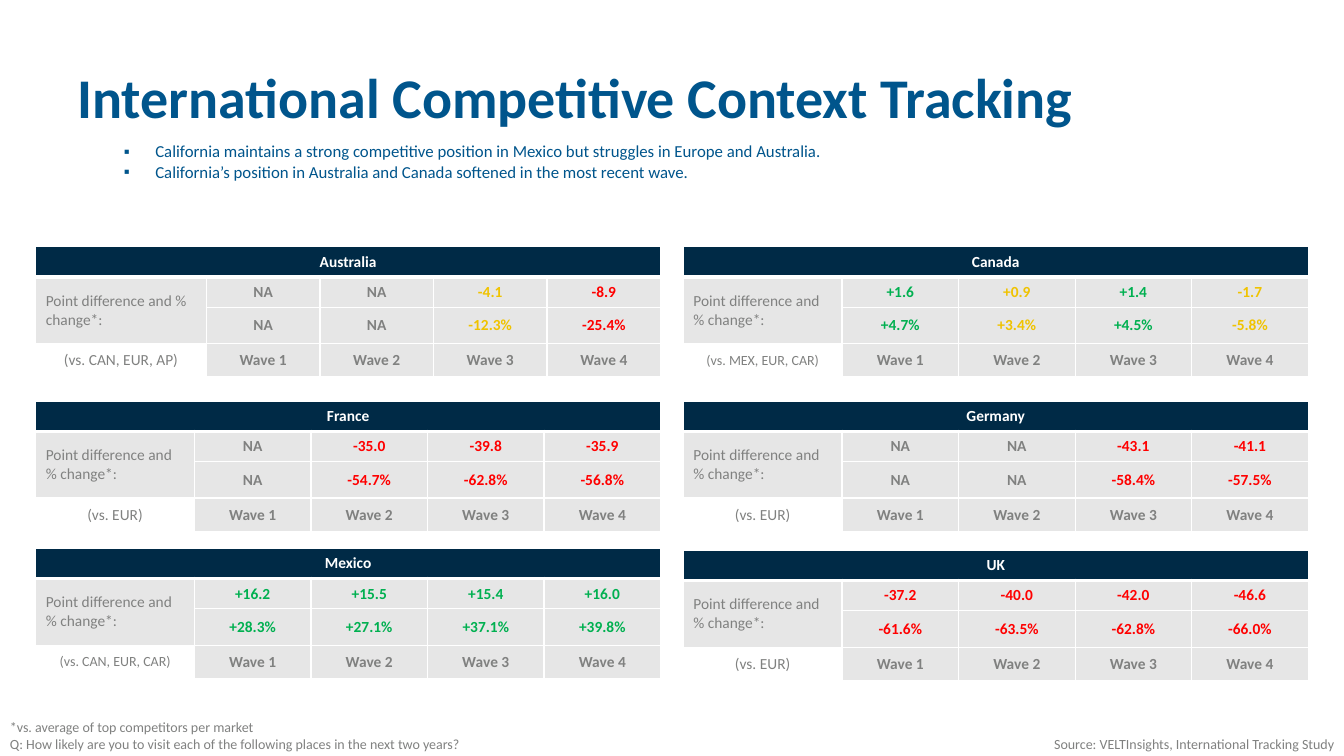
from lxml import etree
from pptx import Presentation
from pptx.dml.color import RGBColor
from pptx.enum.text import MSO_ANCHOR, MSO_AUTO_SIZE, PP_ALIGN
from pptx.oxml.ns import qn
from pptx.util import Cm, Pt

LEFT, CENTER, RIGHT = PP_ALIGN.LEFT, PP_ALIGN.CENTER, PP_ALIGN.RIGHT
TOP, MIDDLE = MSO_ANCHOR.TOP, MSO_ANCHOR.MIDDLE
NO_AUTOFIT = MSO_AUTO_SIZE.NONE

FONT = "Calibri"
COLORS = {
    "blue": "00558C",
    "navy": "002A46",
    "gray": "808180",
    "light": "E6E6E6",
    "white": "FFFFFF",
    "green": "00B050",
    "yellow": "F0C300",
    "red": "FF0000",
}
TITLE = "International Competitive Context Tracking"
FINDINGS = [
    "California maintains a strong competitive position in Mexico but struggles in Europe and Australia.",
    "California’s position in Australia and Canada softened in the most recent wave.",
]
FOOTNOTES = [
    "*vs. average of top competitors per market",
    "Q: How likely are you to visit each of the following places in the next two years?",
]
SOURCE = "Source: VELTInsights, International Tracking Study"

MEASURE = "Point difference and % change*:"
WAVES = ["Wave 1", "Wave 2", "Wave 3", "Wave 4"]
LEFT_TABLE, RIGHT_TABLE = 0.9, 17.22
TABLE_WIDTH = 15.75
LABEL_WIDTH, WIDE_LABEL_WIDTH = 4, 4.3
ROW_HEIGHTS = [0.76, 0.76, 0.92, 0.84]

# Market, left, top, label width, point differences, % changes, competitors, their text size
MARKETS = [
    ("Australia", LEFT_TABLE, 6.22, WIDE_LABEL_WIDTH, ["NA", "NA", "-4.1", "-8.9"],
     ["NA", "NA", "-12.3%", "-25.4%"], "(vs. CAN, EUR, AP)", 11),
    ("Canada", RIGHT_TABLE, 6.22, LABEL_WIDTH, ["+1.6", "+0.9", "+1.4", "-1.7"],
     ["+4.7%", "+3.4%", "+4.5%", "-5.8%"], "(vs. MEX, EUR, CAR)", 10),
    ("France", LEFT_TABLE, 10.11, LABEL_WIDTH, ["NA", "-35.0", "-39.8", "-35.9"],
     ["NA", "-54.7%", "-62.8%", "-56.8%"], "(vs. EUR)", 11),
    ("Germany", RIGHT_TABLE, 10.11, LABEL_WIDTH, ["NA", "NA", "-43.1", "-41.1"],
     ["NA", "NA", "-58.4%", "-57.5%"], "(vs. EUR)", 11),
    ("Mexico", LEFT_TABLE, 13.82, LABEL_WIDTH, ["+16.2", "+15.5", "+15.4", "+16.0"],
     ["+28.3%", "+27.1%", "+37.1%", "+39.8%"], "(vs. CAN, EUR, CAR)", 10),
    ("UK", RIGHT_TABLE, 13.87, LABEL_WIDTH, ["-37.2", "-40.0", "-42.0", "-46.6"],
     ["-61.6%", "-63.5%", "-62.8%", "-66.0%"], "(vs. EUR)", 11),
]


def rgb(color):
    return RGBColor.from_string(COLORS[color])


def place(shape, left, top, width, height):
    shape.left, shape.top = Cm(left), Cm(top)
    shape.width, shape.height = Cm(width), Cm(height)


def write(paragraph, text, size, color, bold=False, align=LEFT):
    paragraph.alignment = align
    run = paragraph.add_run()
    run.text = text
    run.font.name = FONT
    run.font.size = Pt(size)
    run.font.bold = bold
    run.font.color.rgb = rgb(color)


def write_lines(frame, lines, size, color, align=LEFT):
    frame.word_wrap = True
    frame.auto_size = NO_AUTOFIT
    frame.vertical_anchor = TOP
    for index, line in enumerate(lines):
        paragraph = frame.paragraphs[0] if index == 0 else frame.add_paragraph()
        write(paragraph, line, size, color, align=align)


def fill_title(shape):
    place(shape, 1.7, 1.37, 30.5, 2)
    frame = shape.text_frame
    frame.word_wrap = True
    frame.auto_size = NO_AUTOFIT
    frame.vertical_anchor = TOP
    paragraph = frame.paragraphs[0]
    paragraph.line_spacing = Pt(50)
    paragraph.space_before = Pt(10)
    write(paragraph, TITLE, 40, "blue", bold=True)


def fill_findings(shape):
    place(shape, 2.87, 3.43, 28.85, 1.8)
    write_lines(shape.text_frame, FINDINGS, 12, "blue")
    for paragraph in shape.text_frame.paragraphs:
        paragraph.space_before = Pt(0)
        properties = paragraph._p.get_or_add_pPr()
        properties.set("marL", str(Cm(0.79)))
        properties.set("indent", str(Cm(-0.79)))
        etree.SubElement(properties, qn("a:buChar"), char="▪")


def add_note(slide, position, lines, align=LEFT):
    box = slide.shapes.add_textbox(0, 0, 0, 0)
    place(box, *position)
    write_lines(box.text_frame, lines, 10, "gray", align)


def add_border(cell, side, points):
    line = etree.SubElement(cell._tc.get_or_add_tcPr(), qn(f"a:ln{side}"), w=str(Pt(points)))
    fill = etree.SubElement(line, qn("a:solidFill"))
    etree.SubElement(fill, qn("a:srgbClr"), val=COLORS["white"])


def format_cell(cell, row, column):
    cell.vertical_anchor = MIDDLE
    for side in "LRTB":
        below_header = (row, side) in [(0, "B"), (1, "T")]
        add_border(cell, side, 3 if below_header else 1)
    if (row, column) == (3, 0):
        cell.fill.background()
    else:
        cell.fill.solid()
        cell.fill.fore_color.rgb = rgb("navy" if row == 0 else "light")


def rating(points):
    """Colour of a wave, judged by its point difference."""
    if points == "NA":
        return "gray"
    if float(points) >= 1:
        return "green"
    return "yellow" if float(points) > -5 else "red"


def add_market(slide, market, left, top, label_width, points, changes, competitors, competitors_size):
    table = slide.shapes.add_table(
        len(ROW_HEIGHTS), len(WAVES) + 1, Cm(left), Cm(top), Cm(TABLE_WIDTH), Cm(sum(ROW_HEIGHTS))
    ).table
    table.horz_banding = False
    wave_width = (TABLE_WIDTH - label_width) / len(WAVES)
    for column, width in zip(table.columns, [label_width] + [wave_width] * len(WAVES)):
        column.width = Cm(width)
    for row, height in enumerate(ROW_HEIGHTS):
        table.rows[row].height = Cm(height)
        for column in range(len(WAVES) + 1):
            format_cell(table.cell(row, column), row, column)
    table.cell(0, 0).merge(table.cell(0, len(WAVES)))
    table.cell(1, 0).merge(table.cell(2, 0))

    def write_cell(row, column, text, color="gray", bold=True, size=11, align=CENTER):
        write(table.cell(row, column).text_frame.paragraphs[0], text, size, color, bold, align)

    write_cell(0, 0, market, "white")
    write_cell(1, 0, MEASURE, bold=False, align=LEFT)
    write_cell(3, 0, competitors, bold=False, size=competitors_size)
    for column, (point, change, wave) in enumerate(zip(points, changes, WAVES), start=1):
        write_cell(1, column, point, rating(point))
        write_cell(2, column, change, rating(point))
        write_cell(3, column, wave)


def main():
    presentation = Presentation()
    presentation.slide_width, presentation.slide_height = Cm(33.87), Cm(19.05)
    slide = presentation.slides.add_slide(presentation.slide_layouts[1])
    fill_title(slide.shapes.title)
    fill_findings(slide.placeholders[1])
    for market in MARKETS:
        add_market(slide, *market)
    add_note(slide, (0, 17.98, 13.69, 1.07), FOOTNOTES)
    add_note(slide, (18.8, 18.41, 15.07, 0.64), [SOURCE], RIGHT)
    presentation.save("out.pptx")


if __name__ == "__main__":
    main()
